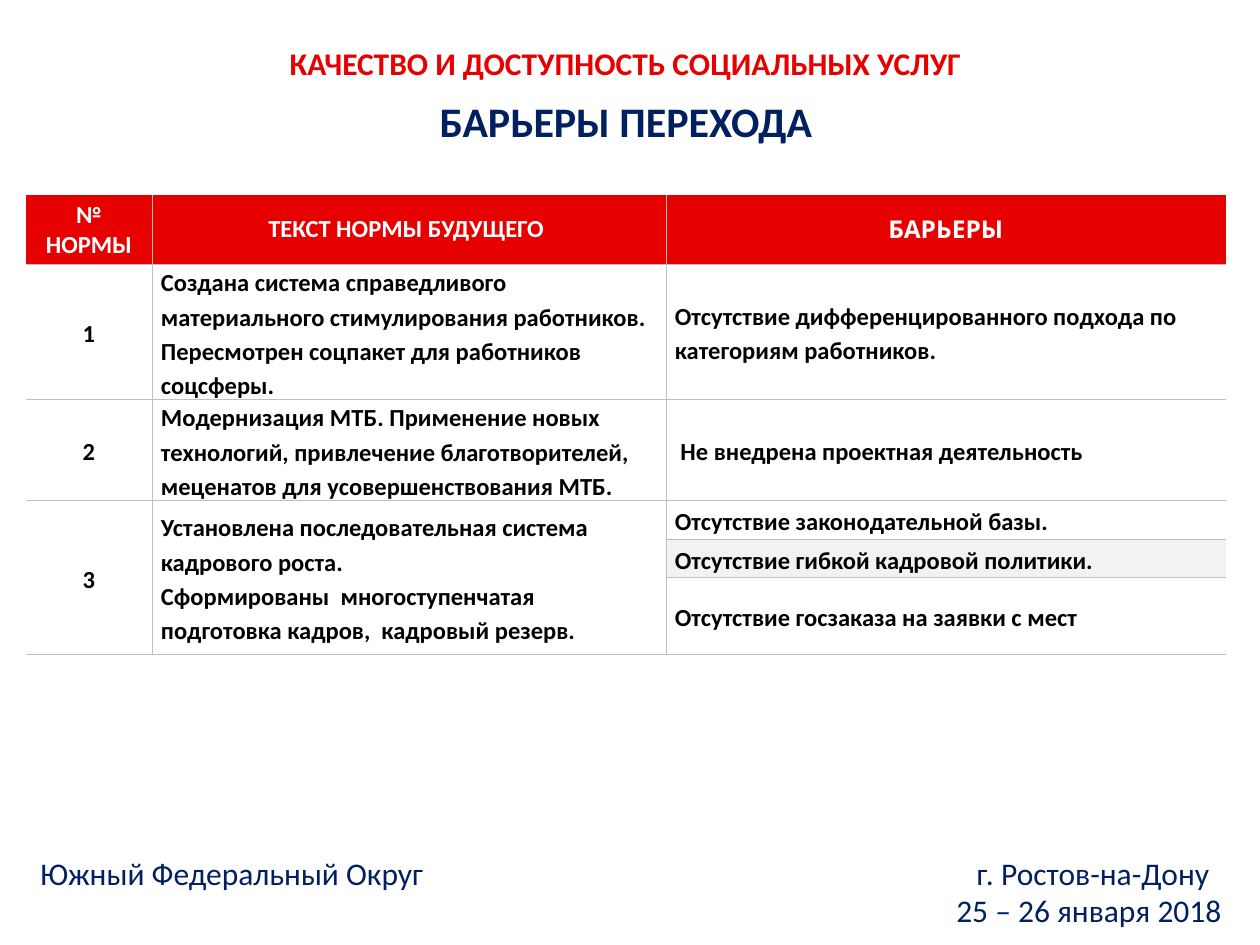
import pptx
import pptx.util
import pptx.dml.color
import pptx.enum.text
from lxml import etree

ALIGN = pptx.enum.text.PP_ALIGN
ANCHOR = pptx.enum.text.MSO_ANCHOR
A = "http://schemas.openxmlformats.org/drawingml/2006/main"
PX = 914400 // 126

THEME = dict(font="Calibri", header_font="Cabin", red="E60000", navy="002060",
             white="FFFFFF", black="000000", band="F2F2F2", line="BFBFBF",
             title=24, text=18, cell=14, border=0.5)

# text, box in px, wrap, anchor, format
TITLES = [
    ("БАРЬЕРЫ ПЕРЕХОДА", (425, 89, 402, 63), False, ANCHOR.TOP,
     dict(size=THEME["title"], color=THEME["navy"], bold=True)),
    ("КАЧЕСТВО И ДОСТУПНОСТЬ СОЦИАЛЬНЫХ УСЛУГ", (175, 38, 901, 49), True, ANCHOR.MIDDLE,
     dict(size=THEME["text"], color=THEME["red"], bold=True)),
]
FOOTER = [("Южный Федеральный Округ\tг. Ростов-на-Дону", ALIGN.LEFT),
          ("25 – 26 января 2018", ALIGN.RIGHT)]
FOOTER_BOX = (28, 854, 1206, 75)
FOOTER_TAB = 1169

TABLE_AT = (26, 195)
COLS = [126, 514, 560]
ROWS = [69, 135, 101, 39, 38, 77]
HEADER = ["№ НОРМЫ", "ТЕКСТ НОРМЫ БУДУЩЕГО ", "БАРЬЕРЫ"]
# number, paragraphs of the norm, barriers (one row each)
NORMS = [
    ("1", ["Создана система справедливого материального стимулирования работников.",
           "Пересмотрен соцпакет для работников соцсферы."],
     ["Отсутствие дифференцированного подхода по категориям работников."]),
    ("2", ["Модернизация МТБ. Применение новых технологий, привлечение благотворителей, "
           "меценатов для усовершенствования МТБ."],
     [" Не внедрена проектная деятельность"]),
    ("3", ["Установлена последовательная система кадрового роста.",
           "Сформированы  многоступенчатая подготовка кадров,  кадровый резерв."],
     ["Отсутствие законодательной базы.", "Отсутствие гибкой кадровой политики.",
      "Отсутствие госзаказа на заявки с мест"]),
]
BANDED_ROW = 4


def rgb(value):
    return pptx.dml.color.RGBColor.from_string(value)


def emu(lengths):
    return [n * PX for n in lengths]


def write(tf, lines, size, color, bold=False, font=THEME["font"], spacing=None):
    """Fill a text frame with (text, alignment) paragraphs."""
    for i, (text, align) in enumerate(lines):
        p = tf.add_paragraph() if i else tf.paragraphs[0]
        p.alignment = align
        p.line_spacing = spacing
        r = p.add_run()
        r.text = text
        values = dict(size=pptx.util.Pt(size), bold=bold, name=font)
        for name, value in values.items():
            setattr(r.font, name, value)
        r.font.color.rgb = rgb(color)


def add_text(s, box, lines, anchor, wrap=True, **fmt):
    tf = s.shapes.add_textbox(*emu(box)).text_frame
    tf.word_wrap = wrap
    tf.vertical_anchor = anchor
    write(tf, lines, **fmt)
    return tf


def add_tab(p, position):
    tabs = etree.SubElement(p._p.get_or_add_pPr(), f"{{{A}}}tabLst")
    etree.SubElement(tabs, f"{{{A}}}tab", pos=str(position * PX), algn="r")


def set_borders(cell, shown):
    """Draw the sides named in shown (of L, R, T, B) and clear the others."""
    pr = cell._tc.get_or_add_tcPr()
    for side in "LRTB":
        ln = etree.SubElement(pr, f"{{{A}}}ln{side}",
                              w=str(pptx.util.Pt(THEME["border"])))
        if side in shown:
            fill = etree.SubElement(ln, f"{{{A}}}solidFill")
            etree.SubElement(fill, f"{{{A}}}srgbClr", val=THEME["line"])
        else:
            etree.SubElement(ln, f"{{{A}}}noFill")


def fill_cell(cell, lines, header=False, **fmt):
    cell.vertical_anchor = ANCHOR.MIDDLE
    cell.margin_left = cell.margin_right = 9 * PX
    cell.margin_top = cell.margin_bottom = 5 * PX if header else 0
    write(cell.text_frame, lines, size=THEME["cell"], bold=True,
          color=THEME["white" if header else "black"],
          spacing=None if header else 1.15, **fmt)


def add_norms_table(s):
    box = (*TABLE_AT, sum(COLS), sum(ROWS))
    table = s.shapes.add_table(len(ROWS), len(COLS), *emu(box)).table
    table.horz_banding = False
    for column, width in zip(table.columns, emu(COLS)):
        column.width = width
    for row, height in zip(table.rows, emu(ROWS)):
        row.height = height

    for c, text in enumerate(HEADER):
        font = THEME["header_font" if c == 2 else "font"]
        fill_cell(table.cell(0, c), [(text, ALIGN.CENTER)], header=True, font=font)
    top = 1
    for number, norm, barriers in NORMS:
        last = top + len(barriers) - 1
        if last > top:
            for c in (0, 1):
                table.cell(top, c).merge(table.cell(last, c))
        fill_cell(table.cell(top, 0), [(number, ALIGN.CENTER)])
        fill_cell(table.cell(top, 1), [(text, ALIGN.LEFT) for text in norm])
        for i, text in enumerate(barriers):
            fill_cell(table.cell(top + i, 2), [(text, ALIGN.LEFT)])
        top = last + 1

    for r in range(len(ROWS)):
        for c in range(len(COLS)):
            cell = table.cell(r, c)
            ends = r == len(ROWS) - 1 or not table.cell(r + 1, c).is_spanned
            sides = {"L": c > 0, "R": c < len(COLS) - 1,
                     "T": r > 0 and not cell.is_spanned,
                     "B": ends or cell.is_merge_origin}
            set_borders(cell, [side for side, shown in sides.items() if shown])
            banded = r == BANDED_ROW and c == 2
            color = "red" if r == 0 else "band" if banded else "white"
            cell.fill.solid()
            cell.fill.fore_color.rgb = rgb(THEME[color])


def main():
    prs = pptx.Presentation()
    prs.slide_width, prs.slide_height = emu((1260, 945))
    s = prs.slides.add_slide(prs.slide_layouts[6])
    for text, box, wrap, anchor, fmt in TITLES:
        add_text(s, box, [(text, ALIGN.CENTER)], anchor, wrap, **fmt)
    add_norms_table(s)
    tf = add_text(s, FOOTER_BOX, FOOTER, ANCHOR.MIDDLE,
                  size=THEME["text"], color=THEME["navy"])
    add_tab(tf.paragraphs[0], FOOTER_TAB)
    prs.save("out.pptx")


if __name__ == "__main__":
    main()
